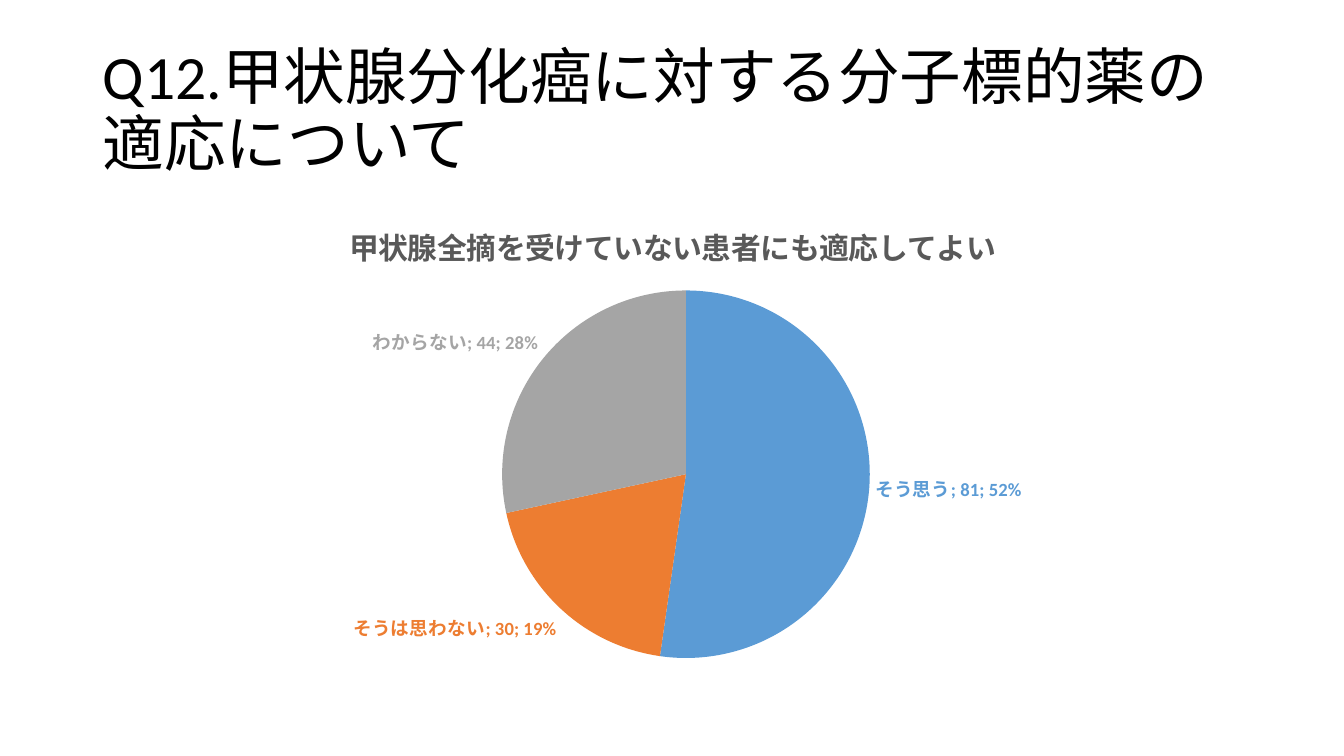
"""Build a slide with a pie chart of answers to survey question Q12."""
import dataclasses

import lxml.etree
import pptx
import pptx.chart.data
import pptx.dml.color
import pptx.enum.chart
import pptx.enum.text
import pptx.oxml
import pptx.oxml.ns
import pptx.util

FONT = "Calibri"
COLORS = {
    "title": "000000",
    "heading": "595959",
    "agree": "5B9BD5",
    "disagree": "ED7D31",
    "unsure": "A5A5A5",
}
SLIDE_WIDTH = pptx.util.Inches(13.33)
SLIDE_HEIGHT = pptx.util.Inches(7.5)
HEADING = "甲状腺全摘を受けていない患者にも適応してよい"


@dataclasses.dataclass(frozen=True)
class Area:
    """A rectangle in shares of its container's size."""

    left: float
    top: float
    width: float
    height: float

    def on_slide(self) -> tuple[int, int, int, int]:
        """Return the rectangle in slide units."""
        return (
            int(self.left * SLIDE_WIDTH),
            int(self.top * SLIDE_HEIGHT),
            int(self.width * SLIDE_WIDTH),
            int(self.height * SLIDE_HEIGHT),
        )


@dataclasses.dataclass(frozen=True)
class Answer:
    """One answer with its number of votes."""

    text: str
    votes: int
    color: str


TITLE_AREA = Area(0.069, 0.053, 0.863, 0.193)
CHART_AREA = Area(0.069, 0.267, 0.863, 0.635)
PIE_AREA = Area(0.353, 0.184, 0.317, 0.767)
ANSWERS = [
    Answer("そう思う", 81, "agree"),
    Answer("そうは思わない", 30, "disagree"),
    Answer("わからない", 44, "unsure"),
]


def rgb(name: str) -> pptx.dml.color.RGBColor:
    """Look up a named colour."""
    return pptx.dml.color.RGBColor.from_string(COLORS[name])


def format_font(font, *, size: float, color: str, bold: bool = False) -> None:
    """Set typeface, size, colour and weight."""
    font.name = FONT
    font.size = pptx.util.Pt(size)
    font.bold = bold
    font.color.rgb = rgb(color)


def write_text(text_frame, text: str, *, line_spacing: float | None = None, **font_format) -> None:
    """Write one formatted paragraph into a text frame."""
    paragraph = text_frame.paragraphs[0]
    paragraph.line_spacing = line_spacing
    run = paragraph.add_run()
    run.text = text
    format_font(run.font, **font_format)


def add_title(slide, text: str, area: Area) -> None:
    """Add the slide title."""
    text_frame = slide.shapes.add_textbox(*area.on_slide()).text_frame
    text_frame.word_wrap = True
    text_frame.vertical_anchor = pptx.enum.text.MSO_ANCHOR.MIDDLE
    write_text(text_frame, text, line_spacing=0.9, size=44, color="title")


def place_pie(chart, area: Area) -> None:
    """Fix the plot area inside the chart."""
    plot_area = chart.element.chart.plotArea
    for layout in plot_area.findall(pptx.oxml.ns.qn("c:layout")):
        plot_area.remove(layout)
    settings = {
        "layoutTarget": "inner",
        "xMode": "edge",
        "yMode": "edge",
        "x": area.left,
        "y": area.top,
        "w": area.width,
        "h": area.height,
    }
    children = "".join(f'<c:{tag} val="{value}"/>' for tag, value in settings.items())
    namespace = pptx.oxml.ns.nsdecls("c")
    plot_area.insert(0, pptx.oxml.parse_xml(
        f"<c:layout {namespace}><c:manualLayout>{children}</c:manualLayout></c:layout>"))


def show_label_parts(chart) -> None:
    """Show category, value and percentage in every label."""
    for label in chart.element.iter(pptx.oxml.ns.qn("c:dLbl")):
        for tag in ("c:showVal", "c:showCatName", "c:showPercent"):
            label.find(pptx.oxml.ns.qn(tag)).set("val", "1")
        separator = lxml.etree.SubElement(label, pptx.oxml.ns.qn("c:separator"))
        separator.text = "; "


def add_pie(slide, heading: str, answers: list[Answer], area: Area) -> None:
    """Add the pie chart of the answers."""
    data = pptx.chart.data.CategoryChartData()
    data.categories = [answer.text for answer in answers]
    data.add_series(heading, [answer.votes for answer in answers])
    chart = slide.shapes.add_chart(
        pptx.enum.chart.XL_CHART_TYPE.PIE, *area.on_slide(), data).chart
    chart.font.name = FONT
    chart.font.size = pptx.util.Pt(10)
    chart.has_legend = False
    chart.has_title = True
    chart.chart_title.include_in_layout = False
    write_text(chart.chart_title.text_frame, heading, size=21.3, color="heading", bold=True)

    series = chart.plots[0].series[0]
    for index, answer in enumerate(answers):
        point = series.points[index]
        point.format.fill.solid()
        point.format.fill.fore_color.rgb = rgb(answer.color)
        format_font(point.data_label.font, size=13.3, color=answer.color, bold=True)
        point.data_label.position = pptx.enum.chart.XL_LABEL_POSITION.OUTSIDE_END
    show_label_parts(chart)
    place_pie(chart, PIE_AREA)


def main() -> None:
    """Create and save the presentation."""
    presentation = pptx.Presentation()
    presentation.slide_width = SLIDE_WIDTH
    presentation.slide_height = SLIDE_HEIGHT
    slide = presentation.slides.add_slide(presentation.slide_layouts[6])
    add_title(slide, "Q12.甲状腺分化癌に対する分子標的薬の適応について", TITLE_AREA)
    add_pie(slide, HEADING, ANSWERS, CHART_AREA)
    presentation.save("out.pptx")


if __name__ == "__main__":
    main()
